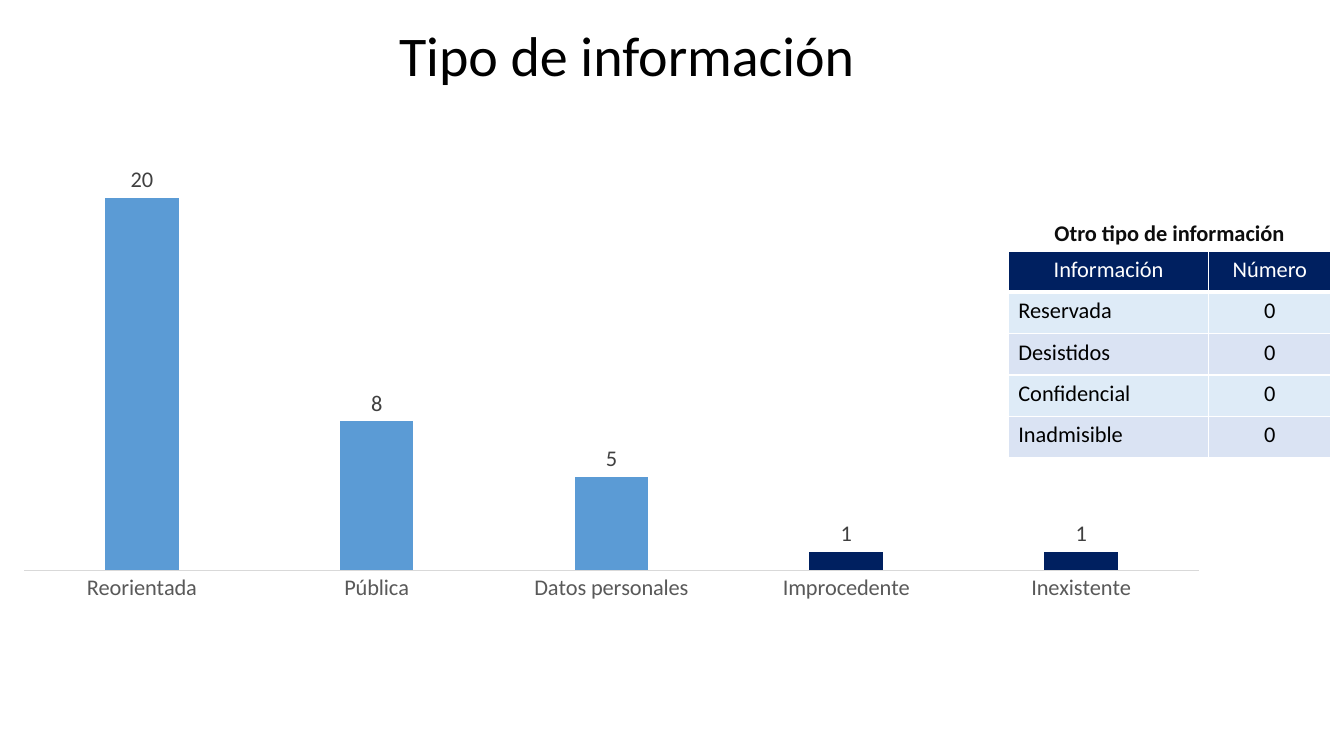
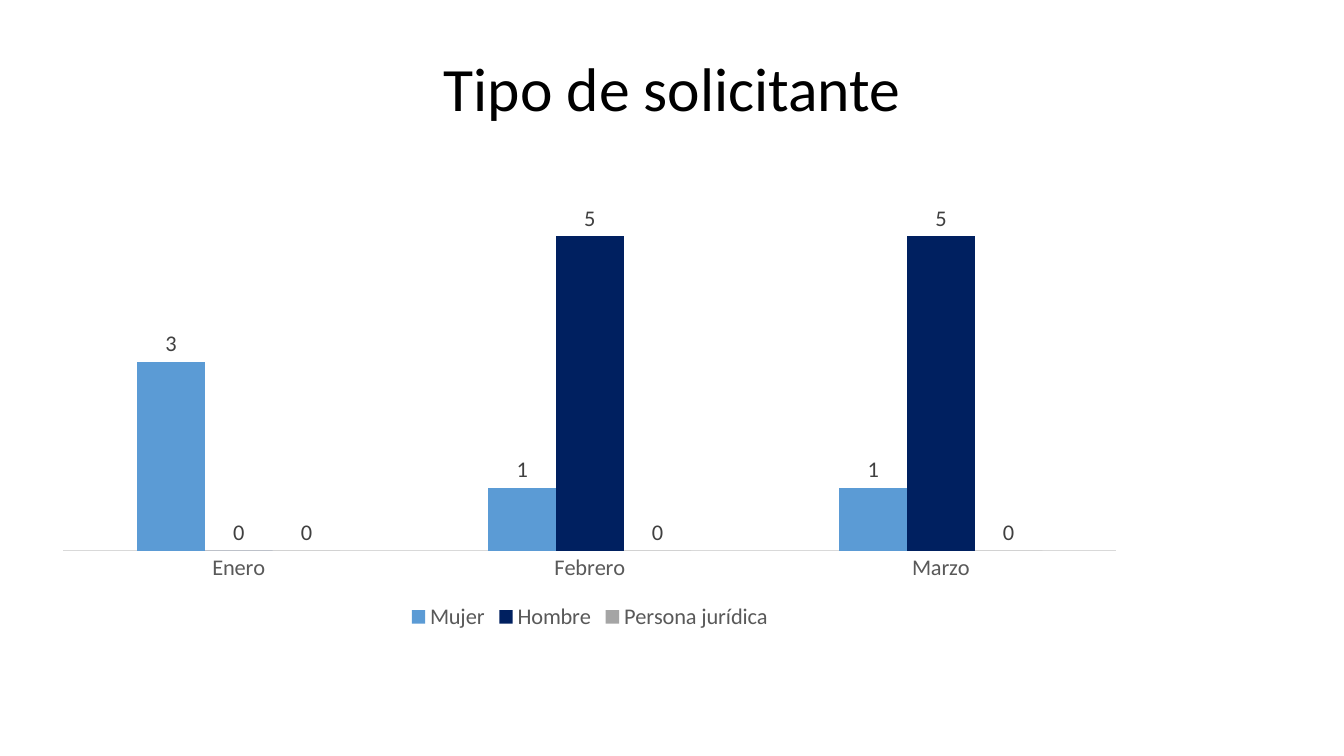
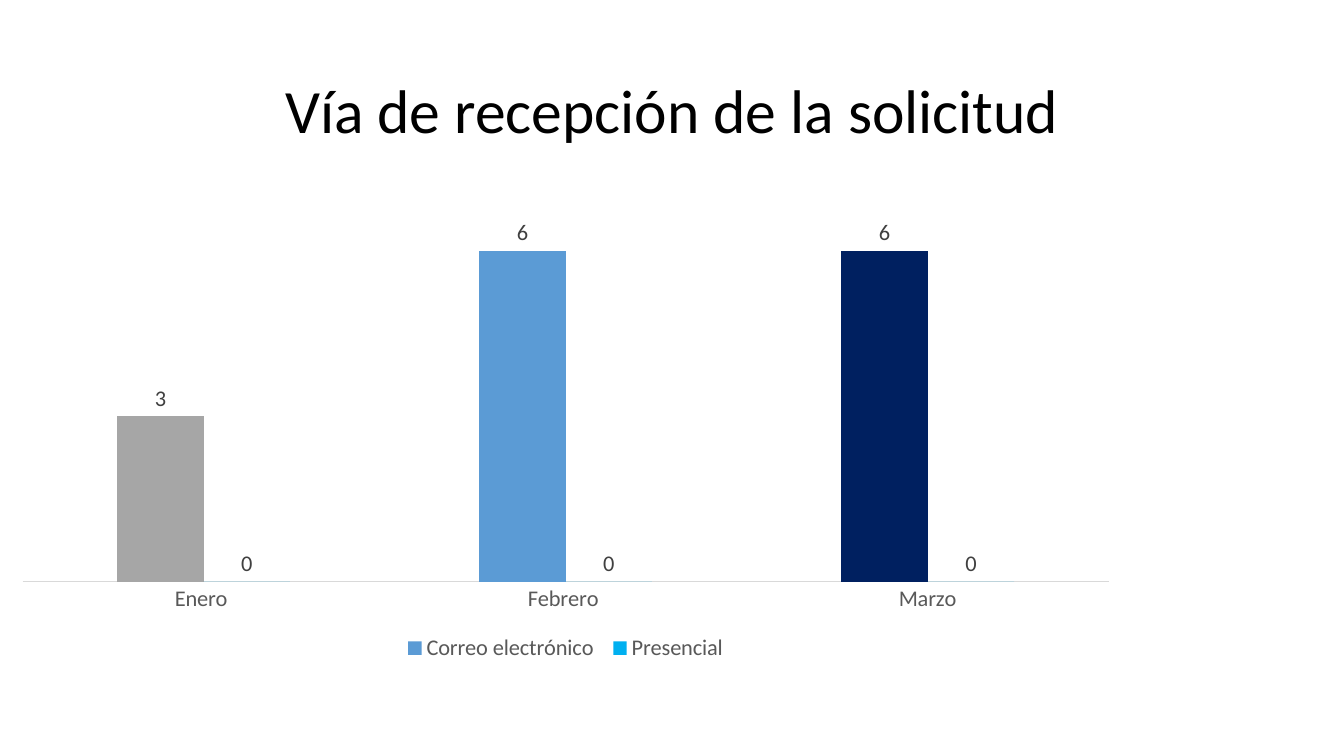
"""Build three slides of column charts on information requests."""
from dataclasses import dataclass

from lxml import etree
from pptx import Presentation
from pptx import util as u
from pptx.chart import data as chart_data
from pptx.dml.color import RGBColor
from pptx.enum import chart as charts, text
from pptx.oxml import ns


@dataclass(frozen=True)
class Theme:
    font: str = "Calibri"
    black: str = "000000"
    white: str = "FFFFFF"
    heading: str = "0D0D0D"
    label: str = "404040"
    axis_text: str = "595959"
    axis_line: str = "D9D9D9"
    blue: str = "5B9BD5"
    navy: str = "002060"
    cyan: str = "00B0F0"
    gray: str = "A5A5A5"
    light_gray: str = "A6A6A6"
    row_fills: tuple = ("DEEBF7", "DAE3F3")
    title_size: int = 44
    small_title_size: int = 40
    body_size: int = 16


THEME = Theme()
TOP, MIDDLE = text.MSO_ANCHOR.TOP, text.MSO_ANCHOR.MIDDLE
LEFT, CENTER = text.PP_ALIGN.LEFT, text.PP_ALIGN.CENTER

SLIDES = [
    {
        "title": ("Tipo de información", (1.49, 0.15, 9.45, 0.77), THEME.small_title_size, TOP, 1.0),
        "chart_box": (0, 0.94, 12.13, 5.13),
        "maximum": 25,
        "legend": False,
        "categories": ["Reorientada", "Pública", "Datos personales", "Improcedente", "Inexistente"],
        "series": [("Series 1", [20, 8, 5, 1, 1], THEME.blue, {3: THEME.navy, 4: THEME.navy})],
    },
    {
        "title": ("Tipo de solicitante", (0.92, 0.18, 11.5, 1.45), THEME.title_size, MIDDLE, 0.9),
        "chart_box": (0.41, 1.63, 10.88, 4.67),
        "maximum": 6,
        "legend": True,
        "categories": ["Enero", "Febrero", "Marzo"],
        "series": [
            ("Mujer", [3, 1, 1], THEME.blue, {}),
            ("Hombre", [0, 5, 5], THEME.navy, {}),
            ("Persona jurídica", [0, 0, 0], THEME.gray, {}),
        ],
    },
    {
        "title": ("Vía de recepción de la solicitud", (0.92, 0.4, 11.5, 1.45), THEME.title_size, MIDDLE, 0.9),
        "chart_box": (0, 1.85, 11.22, 4.76),
        "maximum": 7,
        "legend": True,
        "categories": ["Enero ", "Febrero ", "Marzo"],
        "series": [
            ("Correo electrónico ", [3, 6, 6], THEME.blue, {0: THEME.light_gray, 2: THEME.navy}),
            ("Presencial", [0, 0, 0], THEME.cyan, {}),
        ],
    },
]

TABLE_TITLE = "Otro tipo de información"
TABLE_ROWS = [
    ("Información", "Número"),
    ("Reservada", "0"),
    ("Desistidos", "0"),
    ("Confidencial", "0"),
    ("Inadmisible", "0"),
]
TABLE_LEFT, TABLE_TOP, TITLE_HEIGHT = 10, 2.49, 0.37
COLUMN_WIDTHS, ROW_HEIGHT = (1.99, 1.21), 0.41


def inches(box):
    return [u.Inches(length) for length in box]


def apply_formats(target, formats):
    for name, value in formats.items():
        setattr(target, name, value)


def style_font(font, color, size=THEME.body_size, bold=False):
    apply_formats(font, {"name": THEME.font, "size": u.Pt(size), "bold": bold})
    font.color.rgb = RGBColor.from_string(color)


def paint(fill, color):
    fill.solid()
    fill.fore_color.rgb = RGBColor.from_string(color)


def add_text(slide, content, box, size, color, anchor=TOP, spacing=1.0, bold=False):
    frame = slide.shapes.add_textbox(*inches(box)).text_frame
    apply_formats(frame, {"word_wrap": True, "vertical_anchor": anchor})
    paragraph = frame.paragraphs[0]
    apply_formats(paragraph, {"text": content, "alignment": CENTER, "line_spacing": spacing})
    style_font(paragraph.runs[0].font, color, size, bold)


def add_columns(slide, content):
    data = chart_data.CategoryChartData()
    data.categories = content["categories"]
    for name, values, _, _ in content["series"]:
        data.add_series(name, values)
    chart = slide.shapes.add_chart(
        charts.XL_CHART_TYPE.COLUMN_CLUSTERED, *inches(content["chart_box"]), data
    ).chart
    apply_formats(chart, {"has_title": False, "has_legend": content["legend"]})
    style_font(chart.font, THEME.black)
    if content["legend"]:
        apply_formats(chart.legend, {
            "position": charts.XL_LEGEND_POSITION.BOTTOM, "include_in_layout": False,
        })
        style_font(chart.legend.font, THEME.axis_text)

    apply_formats(chart.value_axis, {
        "visible": False, "has_major_gridlines": False,
        "minimum_scale": 0, "maximum_scale": content["maximum"],
    })
    axis = chart.category_axis
    axis.major_tick_mark = charts.XL_TICK_MARK.NONE
    style_font(axis.tick_labels.font, THEME.axis_text)
    axis.format.line.width = u.Pt(0.75)
    axis.format.line.color.rgb = RGBColor.from_string(THEME.axis_line)

    plot = chart.plots[0]
    apply_formats(plot, {"gap_width": 219, "overlap": 0, "vary_by_categories": False})
    for series, (_, _, color, point_colors) in zip(plot.series, content["series"]):
        series.invert_if_negative = False
        paint(series.format.fill, color)
        for index, point_color in point_colors.items():
            paint(series.points[index].format.fill, point_color)
        labels = series.data_labels
        apply_formats(labels, {
            "show_value": True, "position": charts.XL_LABEL_POSITION.OUTSIDE_END,
        })
        style_font(labels.font, THEME.label)


def add_borders(cell, bottom):
    properties = cell._tc.get_or_add_tcPr()
    for side, width in (("L", 1), ("R", 1), ("T", 1), ("B", bottom)):
        line = etree.SubElement(properties, ns.qn(f"a:ln{side}"), w=str(u.Pt(width)))
        fill = etree.SubElement(line, ns.qn("a:solidFill"))
        etree.SubElement(fill, ns.qn("a:srgbClr"), val=THEME.white)


def add_information_table(slide):
    width, height = sum(COLUMN_WIDTHS), ROW_HEIGHT * len(TABLE_ROWS)
    table = slide.shapes.add_table(
        len(TABLE_ROWS), len(COLUMN_WIDTHS), *inches((TABLE_LEFT, TABLE_TOP, width, height))
    ).table
    for column, column_width in zip(table.columns, COLUMN_WIDTHS):
        column.width = u.Inches(column_width)
    for row_index, values in enumerate(TABLE_ROWS):
        header = row_index == 0
        table.rows[row_index].height = u.Inches(ROW_HEIGHT)
        for column_index, value in enumerate(values):
            cell = table.cell(row_index, column_index)
            add_borders(cell, 3 if header else 1)
            paint(cell.fill, THEME.navy if header else THEME.row_fills[(row_index - 1) % 2])
            paragraph = cell.text_frame.paragraphs[0]
            apply_formats(paragraph, {
                "text": value, "alignment": CENTER if header or column_index else LEFT,
            })
            style_font(paragraph.runs[0].font, THEME.white if header else THEME.black)
    add_text(slide, TABLE_TITLE, (TABLE_LEFT, TABLE_TOP - TITLE_HEIGHT, width, TITLE_HEIGHT),
             THEME.body_size, THEME.heading, bold=True)


def main():
    presentation = Presentation()
    apply_formats(presentation, {"slide_width": u.Inches(13.33), "slide_height": u.Inches(7.5)})
    for content in SLIDES:
        slide = presentation.slides.add_slide(presentation.slide_layouts[6])
        title, box, size, anchor, spacing = content["title"]
        add_text(slide, title, box, size, THEME.black, anchor, spacing)
        add_columns(slide, content)
    add_information_table(presentation.slides[0])
    presentation.save("out.pptx")


if __name__ == "__main__":
    main()
